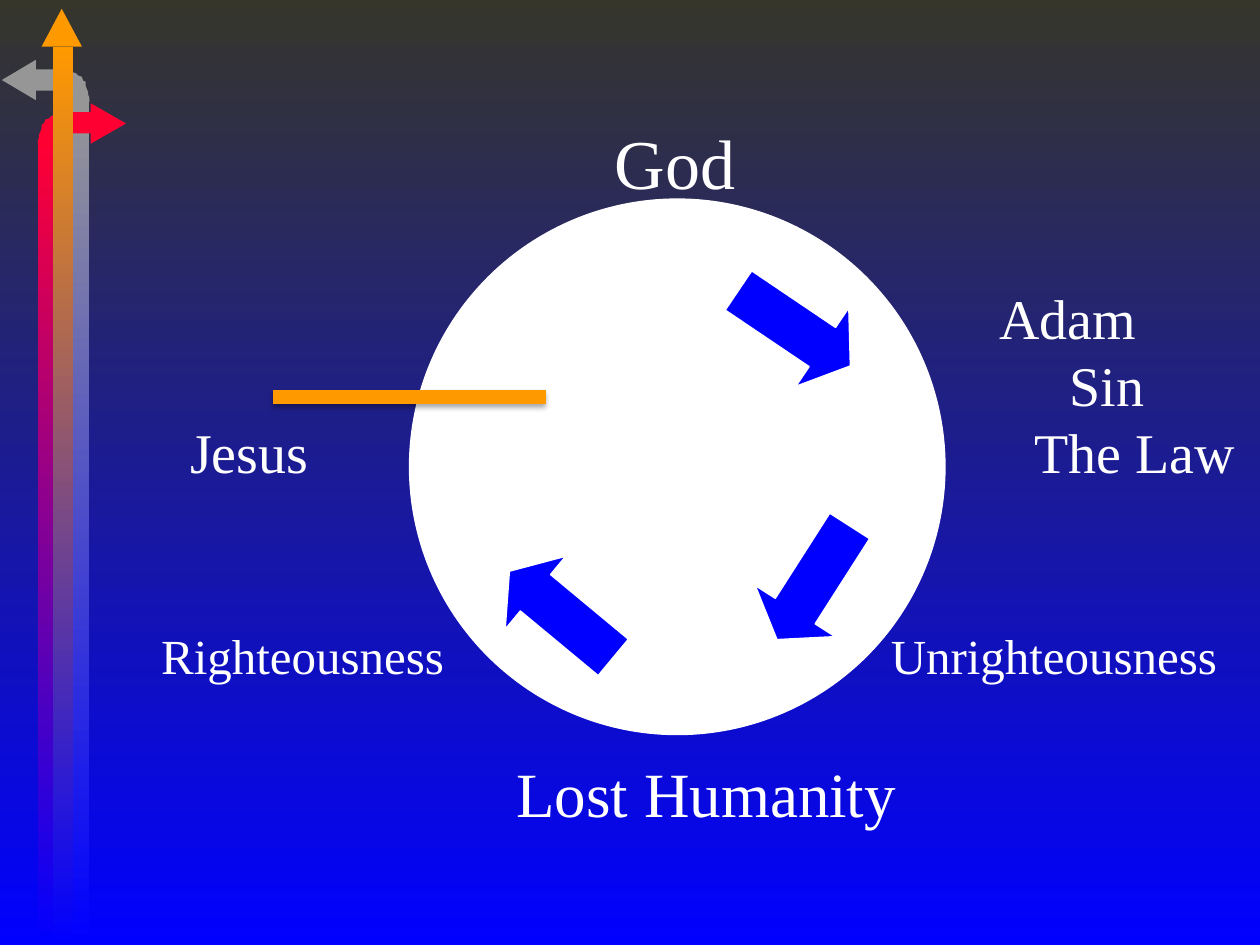
from lxml import etree
from pptx import Presentation
from pptx.dml.color import RGBColor
from pptx.enum.shapes import MSO_CONNECTOR, MSO_SHAPE
from pptx.enum.text import MSO_ANCHOR, MSO_AUTO_SIZE, PP_ALIGN
from pptx.oxml import parse_xml
from pptx.oxml.ns import qn
from pptx.util import Inches, Pt

RECTANGLE = MSO_SHAPE.RECTANGLE
TRIANGLE = MSO_SHAPE.ISOSCELES_TRIANGLE
OVAL = MSO_SHAPE.OVAL
ARROW = MSO_SHAPE.RIGHT_ARROW
STRAIGHT = MSO_CONNECTOR.STRAIGHT
TOP = MSO_ANCHOR.TOP
NO_FIT = MSO_AUTO_SIZE.NONE
LEFT = PP_ALIGN.LEFT

FONT = "Times New Roman"
BLUE, WHITE, ORANGE, RED, GREY = "0000FF", "FFFFFF", "FF9900", "FF0033", "969696"
NIGHT = "36362B"
ASCENT = 0.891

ELBOW = [
    (0, 0), (0, 0.17), (0.03, 0.17), (0.07, 0.18), (0.09, 0.21), (0.11, 0.23),
    (0.11, 0.26), (0.27, 0.26), (0.27, 0.23), (0.26, 0.2), (0.26, 0.18),
    (0.25, 0.16), (0.24, 0.13), (0.24, 0.1), (0.22, 0.09), (0.21, 0.06),
    (0.18, 0.05), (0.16, 0.03), (0.12, 0.02), (0.07, 0.01), (0.04, 0),
]

SHADOW = (
    '<a:effectLst xmlns:a="http://schemas.openxmlformats.org/drawingml/2006/main">'
    '<a:outerShdw blurRad="39370" dist="22860" dir="5400000" rotWithShape="0">'
    '<a:srgbClr val="000000"><a:alpha val="35000"/></a:srgbClr>'
    '</a:outerShdw></a:effectLst>'
)


def color(value):
    return RGBColor.from_string(value)


def fade(fill, start, end):
    fill.gradient()
    fill.gradient_angle = 270
    for stop, value in zip(fill.gradient_stops, (start, end)):
        stop.color.rgb = color(value)


def paint(shape, fill, outline=None):
    shape.shadow.inherit = False
    shape.fill.solid()
    shape.fill.fore_color.rgb = color(fill)
    if outline:
        shape.line.color.rgb = color(outline)
        shape.line.width = Pt(0.75)
    else:
        shape.line.fill.background()


def add_shape(page, kind, box, fill, outline=None, rotation=0):
    shape = page.shapes.add_shape(kind, *(Inches(value) for value in box))
    shape.rotation = rotation
    paint(shape, fill, outline)
    return shape


def add_stem(page, box, fill):
    stem = add_shape(page, RECTANGLE, box, fill)
    fade(stem.fill, fill, BLUE)


def add_elbow(page, left, top, fill, side):
    points = [(Inches(left + side * x), Inches(top + y)) for x, y in ELBOW]
    builder = page.shapes.build_freeform(*points[0])
    builder.add_line_segments(points[1:], close=True)
    paint(builder.convert_to_shape(), fill)


def draw_ribbons(page, left, top, bottom):
    add_shape(page, RECTANGLE, (left + 0.28, top + 0.48, 0.16, 0.17), GREY)
    add_elbow(page, left + 0.44, top + 0.48, GREY, 1)
    add_shape(page, TRIANGLE, (left - 0.01, top + 0.43, 0.32, 0.27), GREY, rotation=270)
    add_shape(page, TRIANGLE, (left + 0.33, top, 0.32, 0.3), ORANGE)
    add_stem(page, (left + 0.55, top + 0.74, 0.16, bottom - top - 0.74), GREY)
    add_elbow(page, left + 0.57, top + 0.82, RED, -1)
    add_shape(page, TRIANGLE, (left + 0.7, top + 0.77, 0.32, 0.28), RED, rotation=90)
    add_shape(page, RECTANGLE, (left + 0.57, top + 0.82, 0.16, 0.17), RED)
    add_stem(page, (left + 0.3, top + 1.07, 0.16, bottom - top - 1.07), RED)
    add_stem(page, (left + 0.42, top + 0.3, 0.16, bottom - top - 0.3), ORANGE)


def draw_cycle(page, left, top, size):
    add_shape(page, OVAL, (left, top, size, size), WHITE, WHITE)
    for x, y, rotation in ((2.52, 0.65, 34), (2.67, 2.67, 122.6), (0.67, 2.92, 219.7)):
        arrow = add_shape(page, ARROW, (left + x, top + y, 1.07, 0.75),
                          BLUE, WHITE, rotation)
        arrow.adjustments[0] = 0.5
        arrow.adjustments[1] = 0.356
    bar_y = Inches(top + 1.57)
    bar = page.shapes.add_connector(
        STRAIGHT, Inches(left - 1.08), bar_y, Inches(left + 1.08), bar_y)
    bar.line.color.rgb = color(ORANGE)
    bar.line.width = Pt(8)
    properties = bar._element.spPr
    for effect in properties.findall(qn("a:effectLst")):
        properties.remove(effect)
    properties.append(parse_xml(etree.tostring(etree.fromstring(SHADOW))))


def write_label(box, text, size, left, baseline, width):
    box.left, box.top = Inches(left), Inches(baseline - ASCENT * size / 72)
    box.width, box.height = Inches(width), Inches(1.15 * size / 72)
    frame = box.text_frame
    frame.word_wrap = True
    frame.auto_size = NO_FIT
    frame.vertical_anchor = TOP
    frame.margin_left = frame.margin_right = 0
    frame.margin_top = frame.margin_bottom = 0
    para = frame.paragraphs[0]
    para.alignment = LEFT
    para.line_spacing = 1.0
    span = para.add_run()
    span.text = text
    span.font.name = FONT
    span.font.size = Pt(size)
    span.font.color.rgb = color(WHITE)


def draw_labels(page, left, top):
    write_label(page.shapes.title, "God", 40, left + 3.7, top + 1.12, 1.2)
    labels = [
        ("Adam", 32, 6.75, 2.33, 1.3),
        ("Sin", 32, 7.31, 2.86, 0.8),
        ("Jesus", 32, 0.33, 3.39, 1.2),
        ("The Law", 32, 7.03, 3.39, 1.75),
        ("Righteousness", 28, 0.1, 4.99, 2.4),
        ("Unrighteousness", 28, 5.89, 4.99, 2.8),
        ("Lost Humanity", 36, 2.92, 6.11, 3.2),
    ]
    for text, size, x, baseline, width in labels:
        box = page.shapes.add_textbox(0, 0, 0, 0)
        write_label(box, text, size, left + x, top + baseline, width)


def main():
    deck = Presentation()
    deck.slide_width, deck.slide_height = Inches(10), Inches(7.5)
    page = deck.slides.add_slide(deck.slide_layouts[5])
    fade(page.background.fill, NIGHT, BLUE)
    draw_ribbons(page, 0, 0.07, 7.5)
    draw_cycle(page, 3.25, 1.58, 4.25)
    draw_labels(page, 1.18, 0.32)
    deck.save("out.pptx")


if __name__ == "__main__":
    main()
